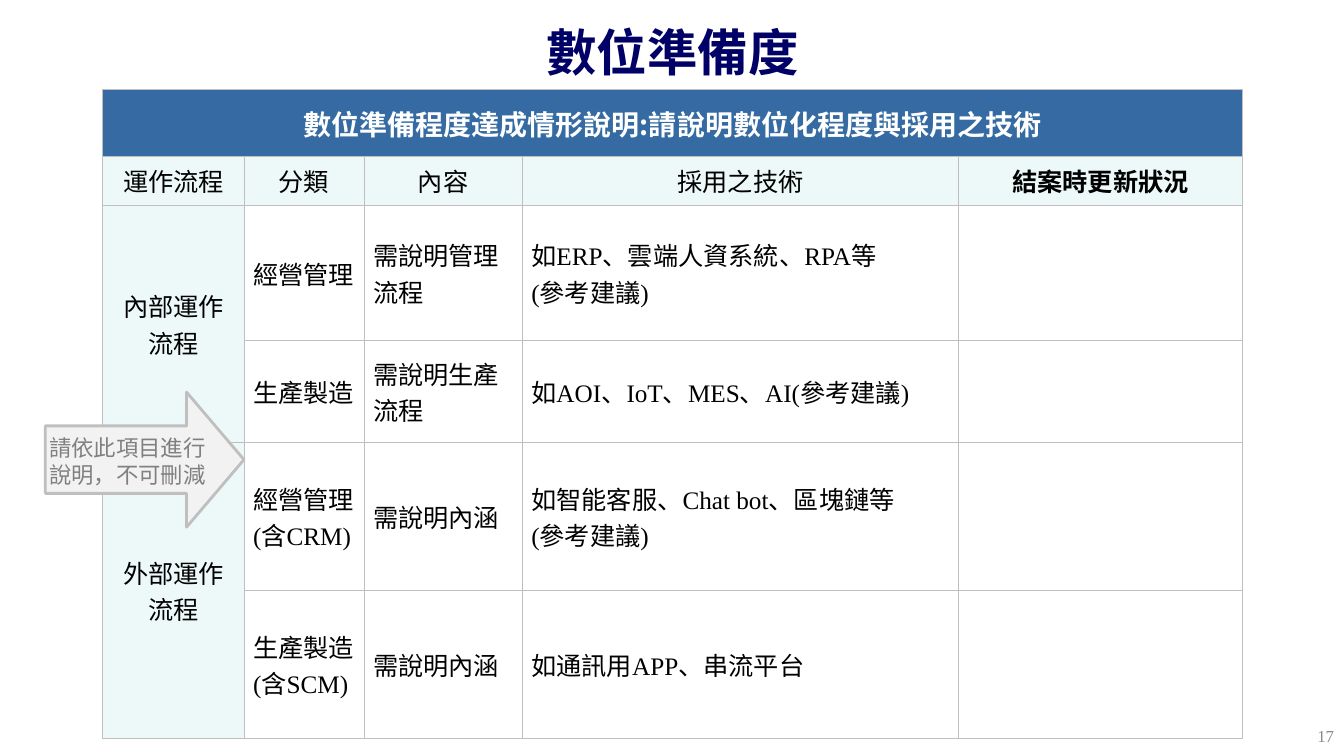
from lxml.etree import SubElement
from pptx import Presentation
from pptx.dml.color import RGBColor
from pptx.enum.shapes import MSO_SHAPE as Shape
from pptx.enum.text import MSO_ANCHOR as Anchor, PP_ALIGN as Align
from pptx.oxml.ns import qn
from pptx.util import Inches, Pt

SERIF, SANS = "Times New Roman", "Noto Sans CJK SC"
MINT = "ECF9F8"
COLS = [1.4, 1.19, 1.57, 4.33, 2.81]
ROWS = [0.66, 0.49, 1.34, 1.01, 1.47, 1.47]
BANNER = [("數位準備程度", SANS), ("達成情形說明", "Arial"),
          (":請說明數位化程度與採用之技術", SANS)]
HEADS = ["運作流程", "分類", "內容", "採用之技術", "結案時更新狀況"]
BODY = [
    ["內部運作流程", "經營管理", "需說明管理流程",
     "如ERP、雲端人資系統、RPA等\v(參考建議)", ""],
    ["", "生產製造", "需說明生產流程", "如AOI、IoT、MES、AI(參考建議)", ""],
    ["外部運作流程", "經營管理\n(含CRM)", "需說明內涵",
     "如智能客服、Chat bot、區塊鏈等\n(參考建議)", ""],
    ["", "生產製造\n(含SCM)", "需說明內涵", "如通訊用APP、串流平台", ""],
]


def color(code):
    return RGBColor.from_string(code)


def style(frame, size, face, ink="000000", bold=False, align=Align.LEFT):
    for para in frame.paragraphs:
        para.alignment = align
        font = para.font
        font.size, font.name, font.bold = Pt(size), face, bold
        font.color.rgb = color(ink)


def border(cell):
    props = cell._tc.get_or_add_tcPr()
    for side in ("lnL", "lnR", "lnT", "lnB"):
        line = SubElement(props, qn(f"a:{side}"), w=str(Pt(0.75)))
        fill = SubElement(line, qn("a:solidFill"))
        SubElement(fill, qn("a:srgbClr"), val="BFBFBF")


def paint(cell, code=None):
    """Draw the borders, then fill the cell or leave it clear."""
    border(cell)
    cell.vertical_anchor = Anchor.MIDDLE
    cell.margin_left = cell.margin_right = Inches(0.09)
    if code:
        cell.fill.solid()
        cell.fill.fore_color.rgb = color(code)
    else:
        cell.fill.background()


def add_text(slide, text, x, y, w, h):
    frame = slide.shapes.add_textbox(
        Inches(x), Inches(y), Inches(w), Inches(h)).text_frame
    frame.word_wrap = True
    frame.text = text
    return frame


def add_title(slide, x, y, w, h):
    title = slide.shapes.title
    title.left, title.top = Inches(x), Inches(y)
    title.width, title.height = Inches(w), Inches(h)
    title.text_frame.text = "數位準備度"
    title.text_frame.vertical_anchor = Anchor.TOP
    style(title.text_frame, 36, SERIF, "000066", True, Align.CENTER)


def add_grid(slide, x, y):
    grid = slide.shapes.add_table(
        len(ROWS), len(COLS), Inches(x), Inches(y),
        Inches(sum(COLS)), Inches(sum(ROWS))).table
    for col, width in zip(grid.columns, COLS):
        col.width = Inches(width)
    for row, height in zip(grid.rows, ROWS):
        row.height = Inches(height)

    for col in range(len(COLS)):
        paint(grid.cell(0, col), "356BA2")
    grid.cell(0, 0).merge(grid.cell(0, len(COLS) - 1))
    frame = grid.cell(0, 0).text_frame
    for text, face in BANNER:
        run = frame.paragraphs[0].add_run()
        run.text, run.font.name = text, face
    style(frame, 20, SANS, "FFFFFF", True, Align.CENTER)

    for col, text in enumerate(HEADS):
        cell = grid.cell(1, col)
        paint(cell, MINT)
        cell.text_frame.text = text
        style(cell.text_frame, 18, SANS, bold=col == 4, align=Align.CENTER)

    for row, texts in enumerate(BODY, 2):
        for col, text in enumerate(texts):
            cell = grid.cell(row, col)
            paint(cell, None if col else MINT)
            cell.text_frame.text = text
            style(cell.text_frame, 18, SERIF,
                  align=Align.LEFT if col else Align.CENTER)
            if col == 3:
                for para in cell.text_frame.paragraphs:
                    para.line_spacing = Pt(26)
    for row in (2, 4):
        grid.cell(row, 0).merge(grid.cell(row + 1, 0))


def add_note(slide, x, y, w, h):
    arrow = slide.shapes.add_shape(
        Shape.RIGHT_ARROW, Inches(x), Inches(y), Inches(w), Inches(h))
    arrow.adjustments[1] = 0.425
    arrow.shadow.inherit = False
    arrow.fill.solid()
    arrow.fill.fore_color.rgb = color("F2F2F2")
    arrow.line.color.rgb = color("BFBFBF")
    arrow.line.width = Pt(2)
    frame = add_text(slide, "請依此項目進行\v說明，不可刪減",
                     x - 0.06, y + 0.37, w + 0.27, 0.64)
    style(frame, 16, SANS, "808080")


def add_number(slide, x, y, w, h):
    frame = add_text(slide, "17", x, y, w, h)
    frame.vertical_anchor = Anchor.MIDDLE
    style(frame, 12, SERIF, "898989", align=Align.RIGHT)


def main():
    deck = Presentation()
    deck.slide_width, deck.slide_height = Inches(13.33), Inches(7.5)
    slide = deck.slides.add_slide(deck.slide_layouts[5])
    add_grid(slide, 1.02, 0.89)
    add_number(slide, 10.22, 7.1, 3.11, 0.4)
    add_title(slide, 0.67, 0.16, 12, 0.79)
    add_note(slide, 0.45, 3.89, 1.97, 1.34)
    deck.save("out.pptx")


if __name__ == "__main__":
    main()
